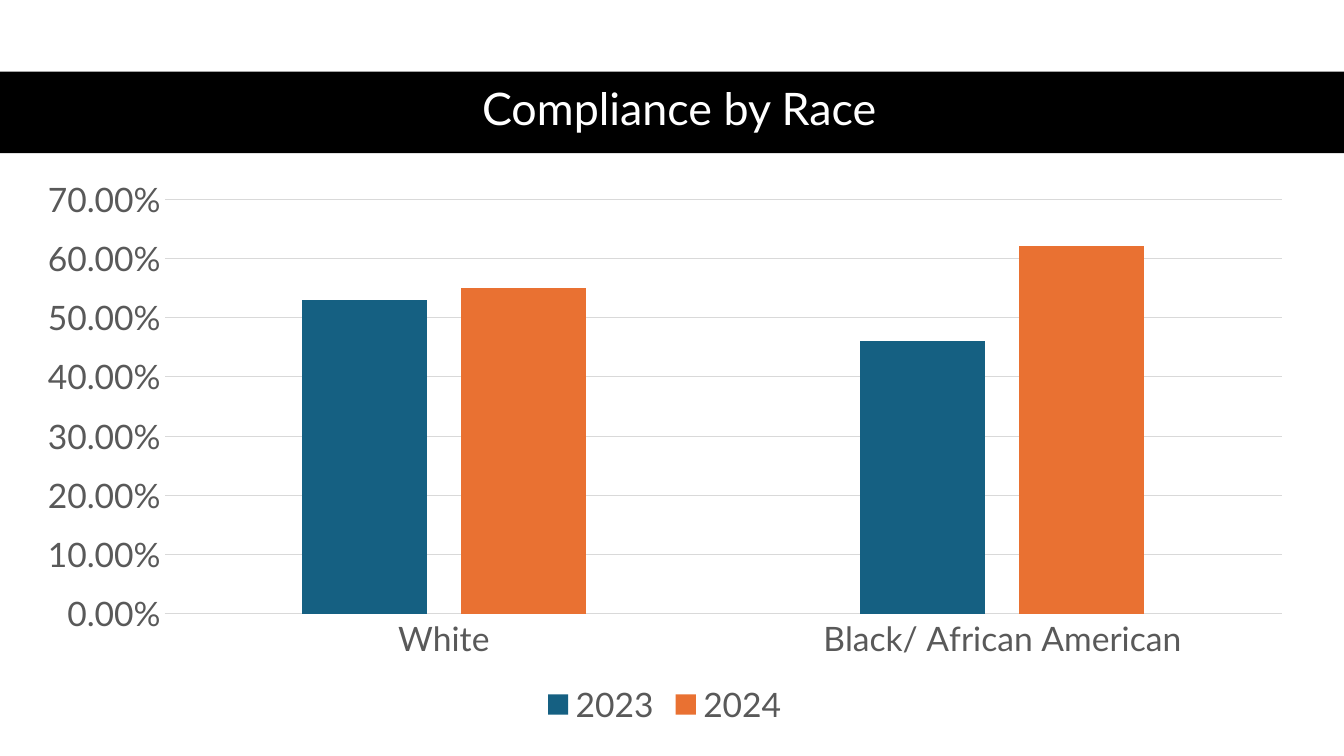
from dataclasses import dataclass

from pptx import Presentation
from pptx import util as u
from pptx.chart.data import CategoryChartData
from pptx.dml.color import RGBColor
from pptx.enum import chart as ch, shapes, text


@dataclass(frozen=True)
class Theme:
    font: str = "Lato"
    title_size: int = 32
    chart_size: int = 24
    band: str = "000000"
    title: str = "FFFFFF"
    label: str = "595959"
    grid: str = "D9D9D9"
    series: tuple = ("156082", "E97132")


theme = Theme()


def style_font(font, size, color):
    font.name = theme.font
    font.size = u.Pt(size)
    font.color.rgb = RGBColor.from_string(color)


def write(tf, content, *, size, color, align, anchor, spacing):
    tf.word_wrap = True
    tf.vertical_anchor = anchor
    p = tf.paragraphs[0]
    p.alignment = align
    p.line_spacing = spacing
    r = p.add_run()
    r.text = content
    style_font(r.font, size, color)


prs = Presentation()
prs.slide_width, prs.slide_height = u.Pt(960), u.Pt(540)
s = prs.slides.add_slide(prs.slide_layouts[6])

# Title band
band = s.shapes.add_shape(shapes.MSO_SHAPE.RECTANGLE,
                          u.Pt(0), u.Pt(51.1), prs.slide_width, u.Pt(58.3))
band.shadow.inherit = False
band.fill.solid()
band.fill.fore_color.rgb = RGBColor.from_string(theme.band)
band.line.fill.background()

title = s.shapes.add_textbox(u.Pt(43.9), u.Pt(50.4), u.Pt(882.7), u.Pt(58.3))
write(title.text_frame, "Compliance by Race", size=theme.title_size,
      color=theme.title, align=text.PP_ALIGN.CENTER,
      anchor=text.MSO_ANCHOR.MIDDLE, spacing=0.9)

# Compliance chart
data = CategoryChartData(number_format="0.00%")
data.categories = ["White", "Black/ African American"]
data.add_series("2023", (0.53, 0.46))
data.add_series("2024", (0.55, 0.62))
chart = s.shapes.add_chart(ch.XL_CHART_TYPE.COLUMN_CLUSTERED, u.Pt(15.8),
                           u.Pt(119.5), u.Pt(918), u.Pt(403.2), data).chart
chart.has_title = False
style_font(chart.font, theme.chart_size, theme.label)

chart.has_legend = True
chart.legend.position = ch.XL_LEGEND_POSITION.BOTTOM
chart.legend.include_in_layout = False
style_font(chart.legend.font, theme.chart_size, theme.label)

plot = chart.plots[0]
plot.gap_width = 219
plot.overlap = -27
plot.vary_by_categories = False
for series, color in zip(plot.series, theme.series):
    series.format.fill.solid()
    series.format.fill.fore_color.rgb = RGBColor.from_string(color)
    series.invert_if_negative = False

cat_axis, val_axis = chart.category_axis, chart.value_axis
for axis in (cat_axis, val_axis):
    axis.major_tick_mark = axis.minor_tick_mark = ch.XL_TICK_MARK.NONE
    style_font(axis.tick_labels.font, theme.chart_size, theme.label)

val_axis.minimum_scale, val_axis.maximum_scale = 0, 0.7
val_axis.major_unit = 0.1
val_axis.tick_labels.number_format = "0.00%"
val_axis.tick_labels.number_format_is_linked = False
val_axis.format.line.fill.background()
val_axis.has_major_gridlines = True
for line in (cat_axis.format.line, val_axis.major_gridlines.format.line):
    line.color.rgb = RGBColor.from_string(theme.grid)
    line.width = u.Pt(0.75)

prs.save("out.pptx")
